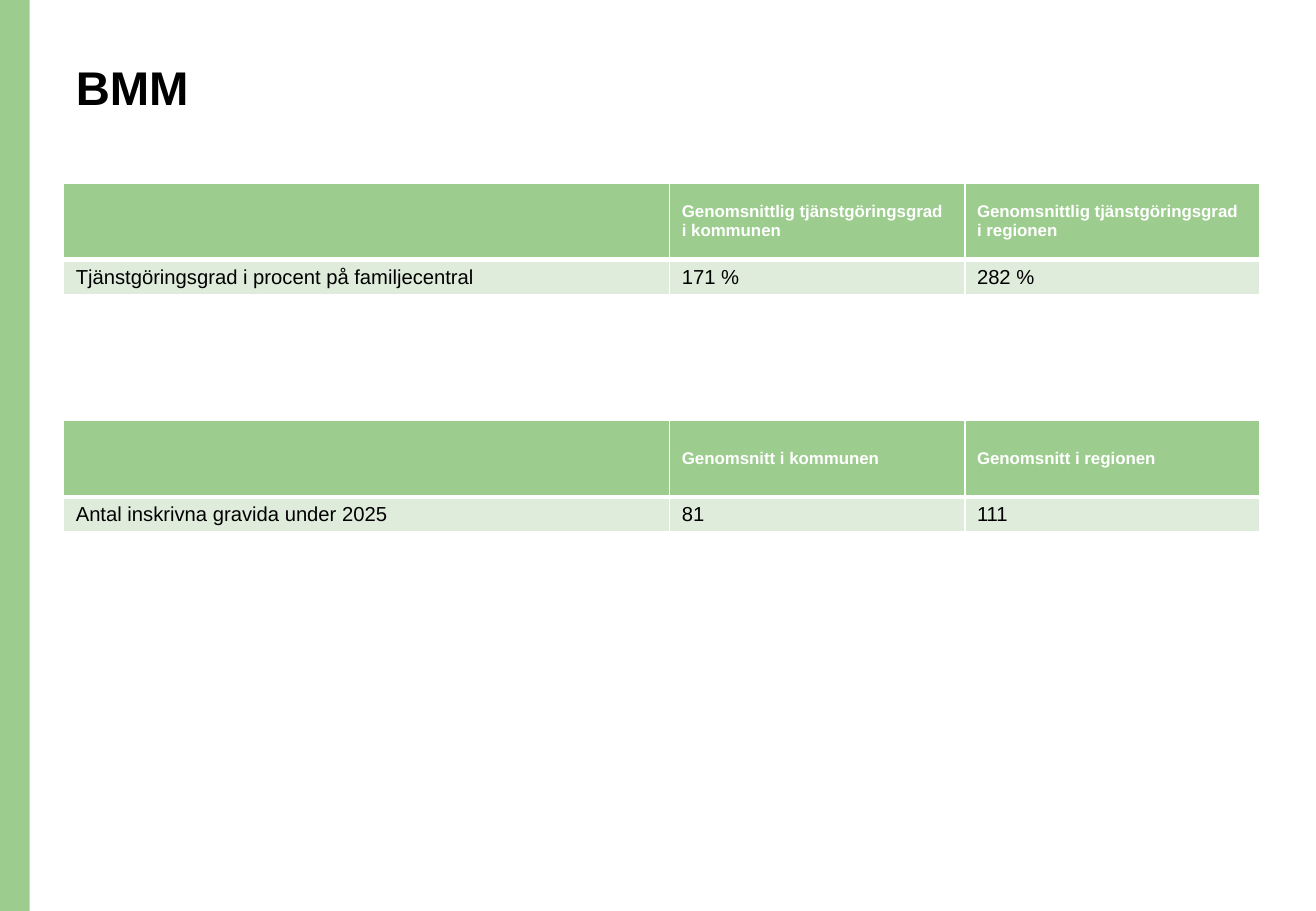
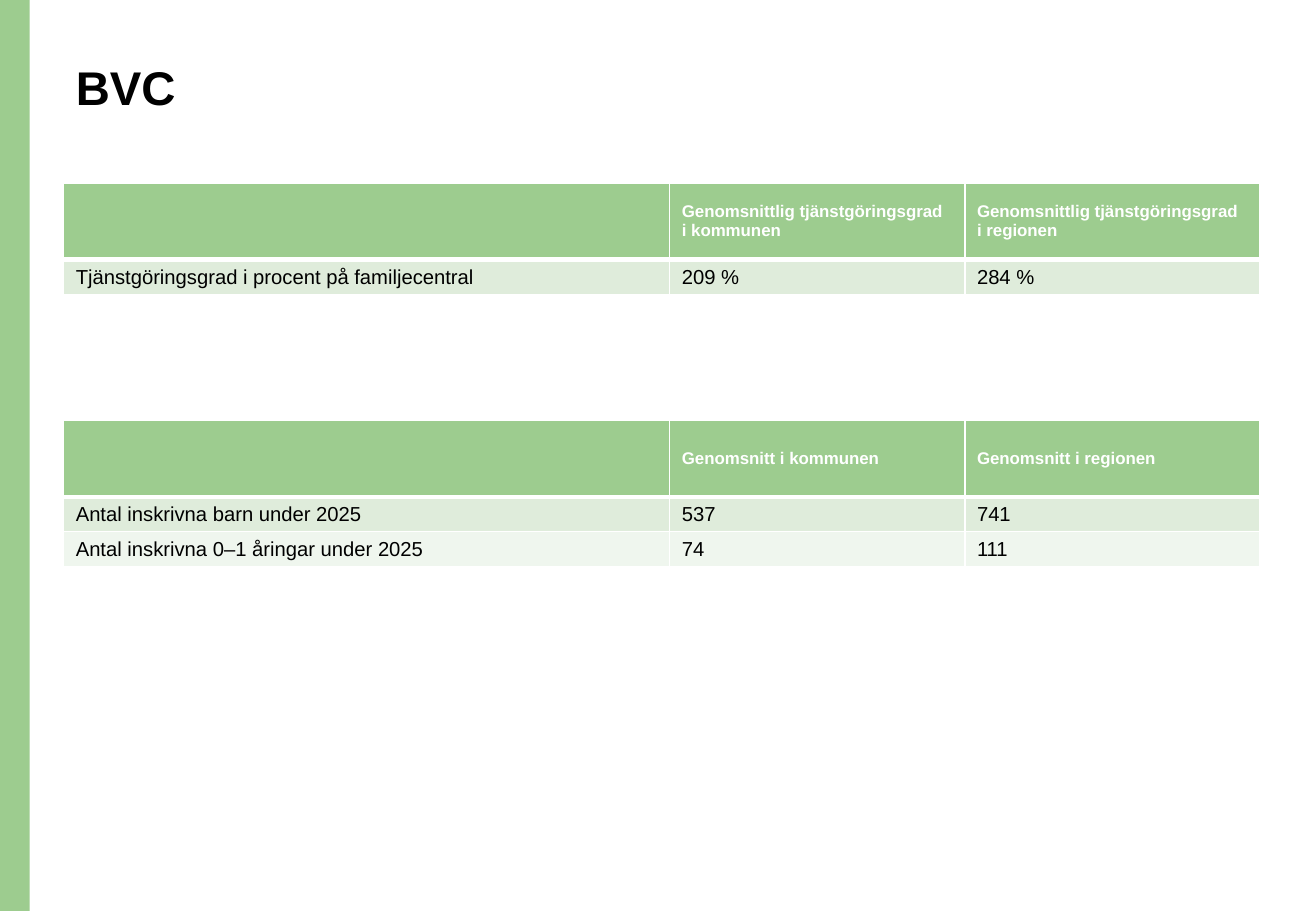
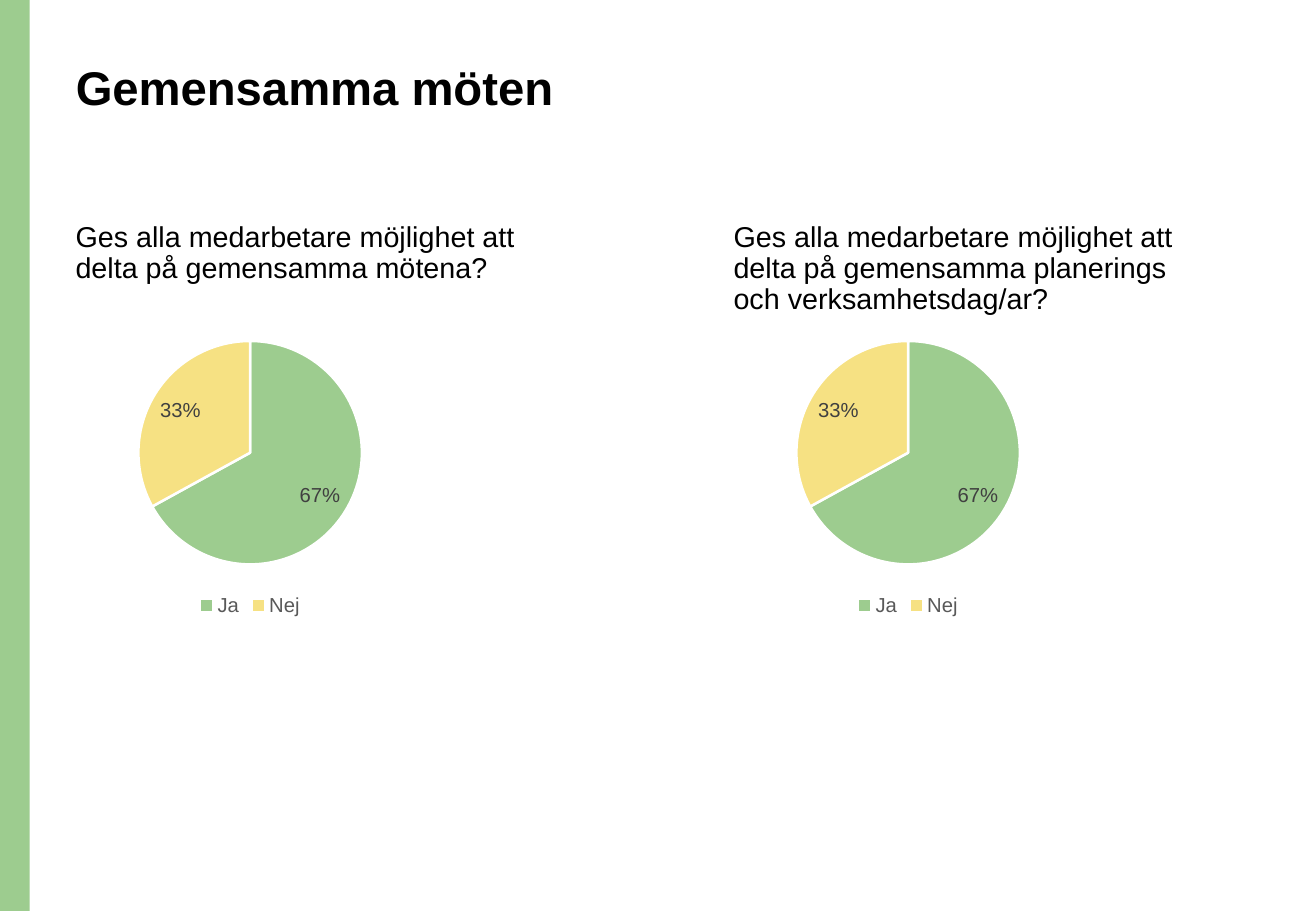
from dataclasses import dataclass
from lxml.etree import SubElement
from pptx import Presentation
from pptx.chart.data import CategoryChartData
from pptx.dml.color import RGBColor
from pptx.enum.chart import XL_CHART_TYPE, XL_LABEL_POSITION, XL_LEGEND_POSITION
from pptx.enum.shapes import MSO_SHAPE
from pptx.enum.text import MSO_ANCHOR, MSO_AUTO_SIZE, PP_ALIGN
from pptx.oxml.ns import qn
from pptx.util import Cm, Pt


@dataclass(frozen=True)
class Theme:
    font: str = "Arial"
    green: str = "9DCC8F"
    light: str = "DFECDB"
    pale: str = "EFF6EE"
    yellow: str = "F6E183"
    black: str = "000000"
    white: str = "FFFFFF"
    label: str = "404040"
    legend: str = "595959"
    title_size: int = 28
    question_size: int = 17
    body_size: int = 12
    header_size: int = 10


theme = Theme()


def style_font(font, size, color, bold=False):
    font.name = theme.font
    font.size = Pt(size)
    font.bold = bold
    font.color.rgb = RGBColor.from_string(color)


def add_borders(cell, top, bottom):
    properties = cell._tc.get_or_add_tcPr()
    sides = (("L", 1), ("R", 1), ("T", top), ("B", bottom))
    for index, (side, width) in enumerate(sides):
        line = SubElement(properties, qn(f"a:ln{side}"), w=str(Pt(width)))
        fill = SubElement(line, qn("a:solidFill"))
        SubElement(fill, qn("a:srgbClr"), val=theme.white)
        properties.insert(index, line)


# Content
rate_header = [
    [],
    ["Genomsnittlig tjänstgöringsgrad", "i kommunen"],
    ["Genomsnittlig tjänstgöringsgrad", "i regionen"],
]
count_header = [[], ["Genomsnitt i kommunen"], ["Genomsnitt i regionen"]]
rate_label = "Tjänstgöringsgrad i procent på familjecentral"
table_pages = {
    "BMM": (
        [(rate_label, "171 %", "282 %")],
        [("Antal inskrivna gravida under 2025", "81", "111")],
    ),
    "BVC": (
        [(rate_label, "209 %", "284 %")],
        [
            ("Antal inskrivna barn under 2025", "537", "741"),
            ("Antal inskrivna 0–1 åringar under 2025", "74", "111"),
        ],
    ),
}
meeting_title = "Gemensamma möten"
questions = [
    ("Ges alla medarbetare möjlighet att delta på gemensamma mötena?", (0.67, 0.33)),
    ("Ges alla medarbetare möjlighet att delta på gemensamma planerings "
     "och verksamhetsdag/ar?", (0.67, 0.33)),
]

deck = Presentation()
deck.slide_width = Cm(27.51)
deck.slide_height = Cm(19.05)
left_edge = Cm(1.33)

# Pages with their side band and title
pages = {}
for title in [*table_pages, meeting_title]:
    page = deck.slides.add_slide(deck.slide_layouts[5])
    pages[title] = page
    band = page.shapes.add_shape(
        MSO_SHAPE.RECTANGLE, 0, 0, Cm(0.62), deck.slide_height)
    band.shadow.inherit = False
    band.fill.solid()
    band.fill.fore_color.rgb = RGBColor.from_string(theme.green)
    band.line.fill.background()

    box = page.shapes.title
    box.left, box.top, box.width, box.height = left_edge, Cm(1.22), Cm(23.72), Cm(2.59)
    frame = box.text_frame
    frame.word_wrap = True
    frame.auto_size = MSO_AUTO_SIZE.NONE
    frame.vertical_anchor = MSO_ANCHOR.TOP
    para = frame.paragraphs[0]
    para.alignment = PP_ALIGN.LEFT
    para.line_spacing = 0.9
    span = para.add_run()
    span.text = title
    style_font(span.font, theme.title_size, theme.black, bold=True)

# Tables
column_widths = (Cm(12.67), Cm(6.17), Cm(6.17))
header_height, row_height = Cm(1.6), Cm(0.73)
row_fills = (theme.green, theme.light, theme.pale)
for title, (rates, counts) in table_pages.items():
    for top, header, records in ((Cm(3.83), rate_header, rates),
                                 (Cm(8.79), count_header, counts)):
        rows = [header] + [[[value] for value in record] for record in records]
        table = pages[title].shapes.add_table(
            len(rows), len(column_widths), left_edge, top, sum(column_widths),
            header_height + row_height * len(records)).table
        table.horz_banding = False
        for column, width in zip(table.columns, column_widths):
            column.width = width
        for row_index, row in enumerate(rows):
            is_header = row_index == 0
            table.rows[row_index].height = header_height if is_header else row_height
            for column_index, lines in enumerate(row):
                cell = table.cell(row_index, column_index)
                cell.vertical_anchor = MSO_ANCHOR.MIDDLE
                cell.fill.solid()
                cell.fill.fore_color.rgb = RGBColor.from_string(row_fills[row_index])
                add_borders(cell, top=3 if row_index == 1 else 1,
                            bottom=3 if is_header else 1)
                frame = cell.text_frame
                for line_index, text in enumerate(lines):
                    para = frame.add_paragraph() if line_index else frame.paragraphs[0]
                    span = para.add_run()
                    span.text = text
                    if is_header:
                        style_font(span.font, theme.header_size, theme.white, bold=True)
                    else:
                        style_font(span.font, theme.body_size, theme.black)

# Questions, each above its pie chart
page = pages[meeting_title]
for index, (question, shares) in enumerate(questions):
    offset = index * deck.slide_width // len(questions)
    box = page.shapes.add_textbox(left_edge + offset, Cm(4.54), Cm(9.96), Cm(2.59))
    frame = box.text_frame
    frame.word_wrap = True
    para = frame.paragraphs[0]
    para.line_spacing = 0.9
    span = para.add_run()
    span.text = question
    style_font(span.font, theme.question_size, theme.black)

    data = CategoryChartData(number_format="0%")
    data.categories = ["Ja", "Nej"]
    data.add_series("Series 1", shares)
    chart = page.shapes.add_chart(
        XL_CHART_TYPE.PIE, Cm(1.7) + offset, Cm(6.78), Cm(7.06), Cm(6.21), data).chart
    style_font(chart.font, theme.header_size, theme.black)
    chart.has_title = False
    chart.has_legend = True
    chart.legend.position = XL_LEGEND_POSITION.BOTTOM
    chart.legend.include_in_layout = False
    style_font(chart.legend.font, theme.body_size, theme.legend)

    plot = chart.plots[0]
    plot.vary_by_categories = True
    for point_index, color in enumerate((theme.green, theme.yellow)):
        slice_format = plot.series[0].points[point_index].format
        slice_format.fill.solid()
        slice_format.fill.fore_color.rgb = RGBColor.from_string(color)
        slice_format.line.color.rgb = RGBColor.from_string(theme.white)
        slice_format.line.width = Pt(1.5)
    labels = plot.series[0].data_labels
    labels.show_value = True
    labels.show_percentage = False
    labels.number_format = "0%"
    labels.number_format_is_linked = False
    labels.position = XL_LABEL_POSITION.INSIDE_END
    style_font(labels.font, theme.body_size, theme.label)

deck.save("out.pptx")
